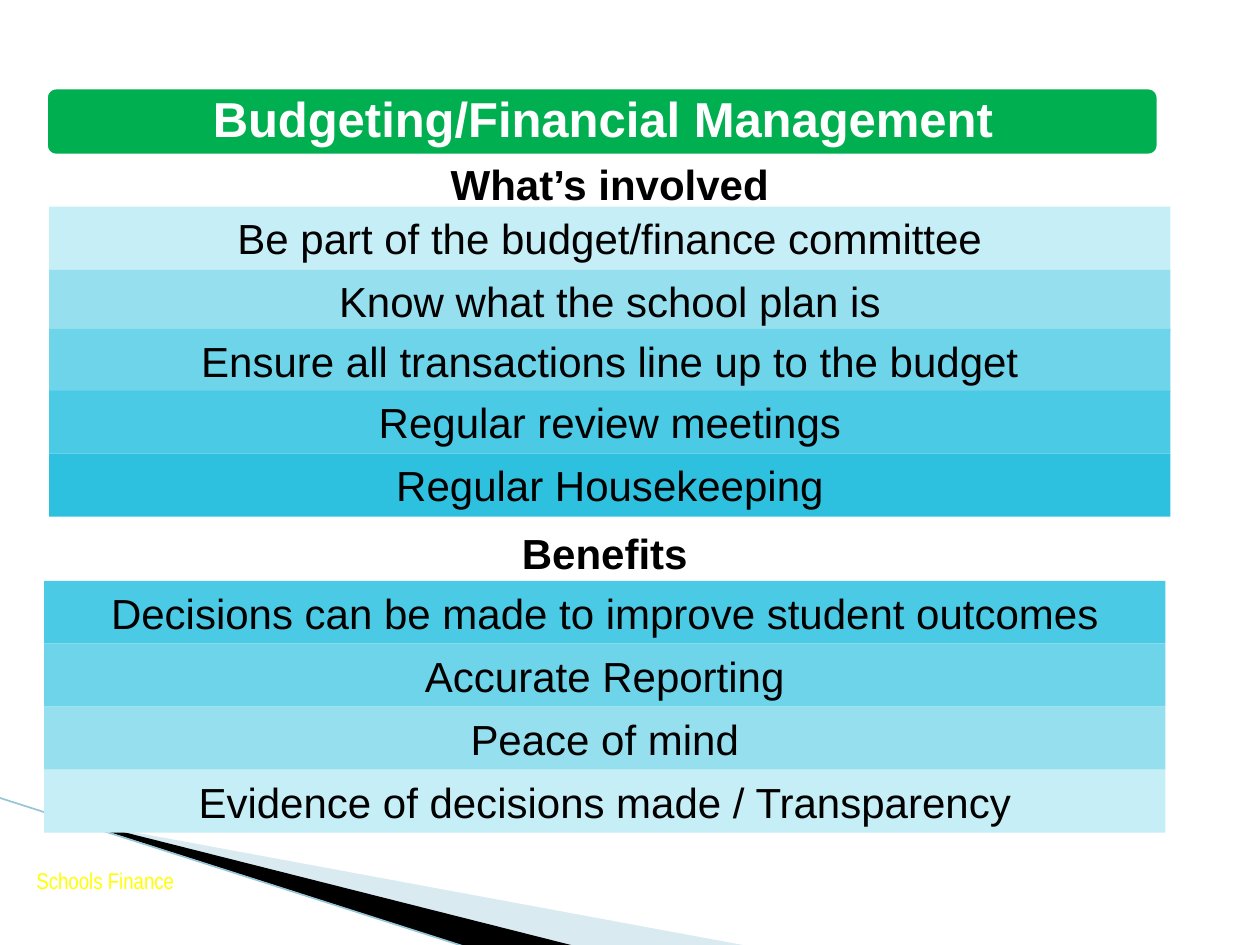
from lxml import etree
from pptx import Presentation
from pptx.dml.color import RGBColor
from pptx.enum import shapes as kinds, text as txt
from pptx.oxml import ns
from pptx.util import Inches, Pt

WHITE = RGBColor(0xFF, 0xFF, 0xFF)
BLACK = RGBColor(0, 0, 0)
GREEN = RGBColor(0x00, 0xB0, 0x50)
YELLOW = RGBColor(0xFF, 0xFF, 0x00)
PALE = RGBColor(0xA0, 0xCB, 0xDC)
EDGE = RGBColor(0x97, 0xC5, 0xD8)
BLUES = [
    RGBColor(0xC6, 0xEE, 0xF6),
    RGBColor(0x96, 0xDF, 0xEE),
    RGBColor(0x6D, 0xD4, 0xE9),
    RGBColor(0x4A, 0xCA, 0xE4),
    RGBColor(0x2D, 0xC1, 0xDF),
]
WIDE, HIGH = 8.9, 0.5
TASKS = [
    (1.64, "Be part of the budget/finance committee"),
    (2.14, "Know what the school plan is"),
    (2.61, "Ensure all transactions line up to the budget"),
    (3.1, "Regular review meetings"),
    (3.6, "Regular Housekeeping"),
]
GAINS = [
    "Decisions can be made to improve student outcomes",
    "Accurate Reporting",
    "Peace of mind",
    "Evidence of decisions made / Transparency",
]


def write(shape, words, size=24, color=BLACK, bold=False, face="Arial"):
    frame = shape.text_frame
    frame.text = words
    frame.word_wrap = True
    frame.auto_size = txt.MSO_AUTO_SIZE.SHAPE_TO_FIT_TEXT
    frame.vertical_anchor = txt.MSO_ANCHOR.TOP
    para = frame.paragraphs[0]
    para.alignment = txt.PP_ALIGN.CENTER
    font = para.runs[0].font
    font.name, font.size, font.bold = face, Pt(size), bold
    font.color.rgb = color


def add_label(slide, box, words, **look):
    label = slide.shapes.add_textbox(*map(Inches, box))
    write(label, words, **look)


def add_block(slide, kind, box, fill):
    block = slide.shapes.add_shape(kind, *map(Inches, box))
    block.shadow.inherit = False
    block.fill.solid()
    block.fill.fore_color.rgb = fill
    block.line.fill.background()
    return block


def add_row(slide, left, top, fill, words):
    kind = kinds.MSO_SHAPE.RECTANGLE
    write(add_block(slide, kind, (left, top, WIDE, HIGH), fill), words)


def add_wedge(slide, points, fill, alpha=None):
    pts = [(Inches(x), Inches(y)) for x, y in points]
    path = slide.shapes.build_freeform(*pts[0])
    path.add_line_segments(pts[1:], close=True)
    wedge = path.convert_to_shape()
    wedge.shadow.inherit = False
    wedge.fill.solid()
    wedge.fill.fore_color.rgb = fill
    wedge.line.fill.background()
    if alpha:
        color = wedge.element.spPr.find(".//" + ns.qn("a:srgbClr"))
        etree.SubElement(color, ns.qn("a:alpha"), val=str(alpha * 1000))


def add_edge(slide, start, end):
    edge = slide.shapes.add_connector(
        kinds.MSO_CONNECTOR.STRAIGHT, *map(Inches, start + end))
    edge.line.color.rgb = EDGE
    edge.line.width = Pt(0.95)
    etree.SubElement(edge.element.spPr, ns.qn("a:effectLst"))


def add_title(slide, words):
    bar = add_block(slide, kinds.MSO_SHAPE.ROUNDED_RECTANGLE,
                    (0.35, 0.68, 8.86, 0.57), GREEN)
    bar.line.color.rgb = WHITE
    bar.line.width = Pt(4.33)
    title = slide.shapes.title
    title.left, title.top = Inches(0.79), Inches(0.71)
    title.width, title.height = Inches(7.99), Inches(0.51)
    write(title, words, size=28, color=WHITE, bold=True)
    frame = title.text_frame
    frame.auto_size = txt.MSO_AUTO_SIZE.NONE
    frame.vertical_anchor = txt.MSO_ANCHOR.MIDDLE
    frame.margin_left = frame.margin_right = Inches(0.09)
    frame.margin_top = frame.margin_bottom = Inches(0.09)
    frame.paragraphs[0].line_spacing = 0.9
    slide.shapes.element.append(title.element)


def main():
    deck = Presentation()
    deck.slide_width, deck.slide_height = Inches(10), Inches(7.5)
    slide = deck.slides.add_slide(deck.slide_layouts[5])
    add_wedge(slide, [(0.55, 6.51), (5.95, 7.51), (4.56, 7.51), (0.55, 6.5)],
              PALE, 40)
    add_wedge(slide, [(0.53, 6.49), (4.57, 7.51), (3.72, 7.52), (0.54, 6.5)],
              BLACK)
    add_edge(slide, (-0.01, 6.33), (3.71, 7.52))
    add_label(slide, (0, 6.83, 1.67, 0.32), "Schools Finance",
              size=13, color=YELLOW, face="Arial Narrow")
    for (top, words), fill in zip(TASKS, BLUES):
        add_row(slide, 0.39, top, fill, words)
    for i, words in enumerate(GAINS):
        add_row(slide, 0.35, 4.61 + i * HIGH, BLUES[3 - i], words)
    add_label(slide, (0.35, 4.14, WIDE, HIGH), "Benefits", bold=True)
    add_title(slide, "Budgeting/Financial Management")
    add_label(slide, (0.39, 1.21, WIDE, HIGH), "What’s involved", bold=True)
    deck.save("out.pptx")


if __name__ == "__main__":
    main()
